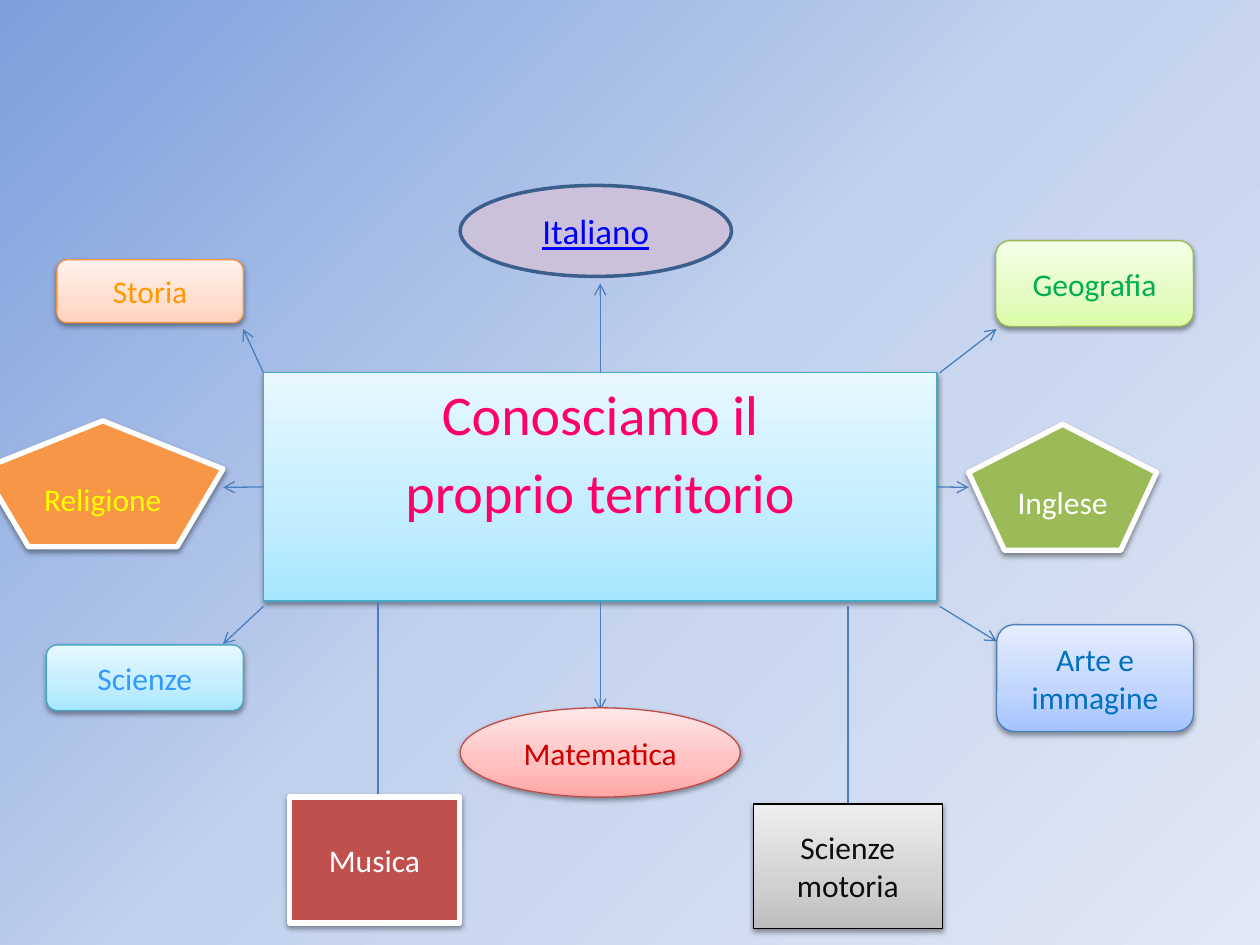
from dataclasses import dataclass
from typing import Optional

from lxml import etree
from pptx import Presentation
from pptx.dml.color import RGBColor
from pptx.enum.shapes import MSO_CONNECTOR, MSO_SHAPE
from pptx.enum.text import MSO_ANCHOR, PP_ALIGN
from pptx.oxml.ns import qn
from pptx.util import Pt

RECT, OVAL = MSO_SHAPE.RECTANGLE, MSO_SHAPE.OVAL
ROUND, PENTA = MSO_SHAPE.ROUNDED_RECTANGLE, MSO_SHAPE.REGULAR_PENTAGON
ALT = MSO_SHAPE.FLOWCHART_ALTERNATE_PROCESS
STRAIGHT = MSO_CONNECTOR.STRAIGHT
CENTER, MIDDLE = PP_ALIGN.CENTER, MSO_ANCHOR.MIDDLE
FONT = "Calibri"


def rgb(code: str) -> RGBColor:
    return RGBColor.from_string(code)


# Colours
WHITE, BLACK, INK = rgb("FFFFFF"), rgb("000000"), rgb("0D0D0D")
PINK, BLUE, NAVY = rgb("FF0066"), rgb("0000FF"), rgb("3A5F8C")
STEEL, TEAL, SKY = rgb("4B7EBC"), rgb("46AAC5"), rgb("3399FF")
AMBER, RUST, GOLD = rgb("FF9900"), rgb("F69240"), rgb("F79646")
GREEN, MOSS, OLIVE = rgb("00B050"), rgb("98B955"), rgb("9BBB59")
RED, BRICK, WINE = rgb("CC0000"), rgb("BF4C48"), rgb("C0504D")
LILAC, YELLOW, AZURE = rgb("CCC1DA"), rgb("FFFF00"), rgb("0070C0")

# Gradients, as three colours
BACK = (rgb("7C9FDC"), rgb("C2D1ED"), rgb("E1E8F5"))
AQUA = (rgb("A7E6FF"), rgb("C1EDFF"), rgb("E7F8FF"))
PEACH = (rgb("FFD2BD"), rgb("FFDED0"), rgb("FFF2ED"))
LIME = (rgb("DAFDA7"), rgb("E4FCC2"), rgb("F5FFE7"))
ROSE = (rgb("FFA6A5"), rgb("FFC0BF"), rgb("FFE7E7"))
ICE = (rgb("A4C4FF"), rgb("BFD4FF"), rgb("E6EEFF"))
GREY = (rgb("BDBDBD"), rgb("D1D1D1"), rgb("EEEEEE"))


@dataclass
class Topic:
    text: str
    kind: MSO_SHAPE
    box: tuple          # left, top, width, height in points
    fill: object        # one colour or a gradient
    edge: RGBColor
    ink: RGBColor
    width: float = 0.75
    size: float = 18
    link: bool = False  # underlined, without shadow


@dataclass
class Spoke:
    start: tuple
    end: tuple
    side: Optional[int] = None  # side of the hub it is joined to


HUB = Topic("Conosciamo il\nproprio territorio", RECT,
            (150.5, 213, 385, 130.5), AQUA, TEAL, PINK, size=32)

TOPICS = [
    Topic("Italiano", OVAL, (263, 106, 155, 52), LILAC, NAVY, BLUE, 2, 20, True),
    Topic("Storia", ROUND, (32.5, 148.5, 106.5, 36), PEACH, RUST, AMBER),
    Topic("Geografia", ROUND, (569, 137.5, 113, 49), LIME, MOSS, GREEN),
    Topic("Matematica", OVAL, (263, 404.5, 160, 51), ROSE, BRICK, RED),
    Topic("Arte e\nimmagine", ALT, (569.5, 357, 112.5, 61), ICE, STEEL, AZURE),
    Topic("Scienze", ALT, (26.5, 368.5, 112.5, 37.5), AQUA, TEAL, SKY),
    Topic("Inglese", PENTA, (553.5, 242.5, 107.5, 72), OLIVE, WHITE, WHITE, 3),
    Topic("Religione", PENTA, (-10, 240.5, 137.5, 72), GOLD, WHITE, YELLOW, 3),
    Topic("Scienze\nmotoria", RECT, (430.5, 459.5, 108, 71), GREY, BLACK, INK),
    Topic("Musica", RECT, (165.5, 455.5, 97, 72), WINE, WHITE, WHITE, 3),
]

SPOKES = [
    Spoke((343, 213), (343, 162), 0),
    Spoke((150.5, 278.5), (127.5, 278.5), 1),
    Spoke((343, 343.5), (343, 406), 2),
    Spoke((535.5, 278.5), (553.5, 278.5), 3),
    Spoke((150.5, 213), (139, 188)),
    Spoke((537, 213), (569.5, 188)),
    Spoke((537, 346.5), (569.5, 366.5)),
    Spoke((150.5, 346.5), (127.5, 368)),
    Spoke((216, 344), (216, 479.5)),
    Spoke((484.5, 346.5), (484.5, 468.5)),
]


def add(parent, tag: str, **attrs):
    return etree.SubElement(parent, qn(tag), {k: str(v) for k, v in attrs.items()})


def blend(parent, colors: tuple, mid: int, angle: int) -> None:
    """Turn the solid fill in parent into a three-stop gradient."""
    solid = parent.find(qn("a:solidFill"))
    grad = etree.Element(qn("a:gradFill"), {"rotWithShape": "1"})
    stops = add(grad, "a:gsLst")
    for pos, color in zip((0, mid, 100), colors):
        add(add(stops, "a:gs", pos=pos * 1000), "a:srgbClr", val=color)
    add(grad, "a:lin", ang=angle * 60000, scaled=0)
    parent.replace(solid, grad)


def style(shape, topic: Topic) -> None:
    props = shape.element.spPr
    shape.fill.solid()
    if isinstance(topic.fill, RGBColor):
        shape.fill.fore_color.rgb = topic.fill
    else:
        blend(props, topic.fill, 35, 270)
    shape.line.color.rgb = topic.edge
    shape.line.width = Pt(topic.width)
    shape.shadow.inherit = False
    if not topic.link:
        drop = add(props.find(qn("a:effectLst")), "a:outerShdw", blurRad=Pt(3.1),
                   dist=Pt(1.6), dir=90 * 60000, rotWithShape=0)
        add(add(drop, "a:srgbClr", val=BLACK), "a:alpha", val=38000)


def write(shape, topic: Topic, gap: float = 0) -> None:
    frame = shape.text_frame
    frame.word_wrap = True
    for i, line in enumerate(topic.text.split("\n")):
        para = frame.add_paragraph() if i else frame.paragraphs[0]
        para.alignment = CENTER
        para.space_before = Pt(gap)
        run = para.add_run()
        run.text = line
        run.font.name = FONT
        run.font.size = Pt(topic.size)
        run.font.color.rgb = topic.ink
        if topic.link:
            run.font.underline = True


def draw_hub(slide):
    hub = slide.placeholders[1]
    hub.left, hub.top, hub.width, hub.height = map(Pt, HUB.box)
    style(hub, HUB)
    write(hub, HUB, 6.4)
    return hub


def draw_spoke(slide, hub, spoke: Spoke) -> None:
    line = slide.shapes.add_connector(STRAIGHT, *map(Pt, spoke.start + spoke.end))
    if spoke.side is not None:
        line.begin_connect(hub, spoke.side)
    line.line.color.rgb = STEEL
    line.line.width = Pt(0.75)
    add(line.line._get_or_add_ln(), "a:tailEnd", type="arrow")
    add(line.element.spPr, "a:effectLst")


def draw_topic(slide, topic: Topic) -> None:
    shape = slide.shapes.add_shape(topic.kind, *map(Pt, topic.box))
    style(shape, topic)
    shape.text_frame.vertical_anchor = MIDDLE
    write(shape, topic)


def main() -> None:
    deck = Presentation()
    deck.slide_width, deck.slide_height = Pt(720), Pt(540)
    slide = deck.slides.add_slide(deck.slide_layouts[0])

    # Background
    slide.background.fill.solid()
    blend(slide.element.find(".//" + qn("p:bgPr")), BACK, 50, 45)

    # The subtitle is the hub; the title is not used
    title = slide.shapes.title.element
    title.getparent().remove(title)
    hub = draw_hub(slide)

    # Arrows lie behind the topics
    for spoke in SPOKES:
        draw_spoke(slide, hub, spoke)
    for topic in TOPICS:
        draw_topic(slide, topic)
    deck.save("out.pptx")


if __name__ == "__main__":
    main()
